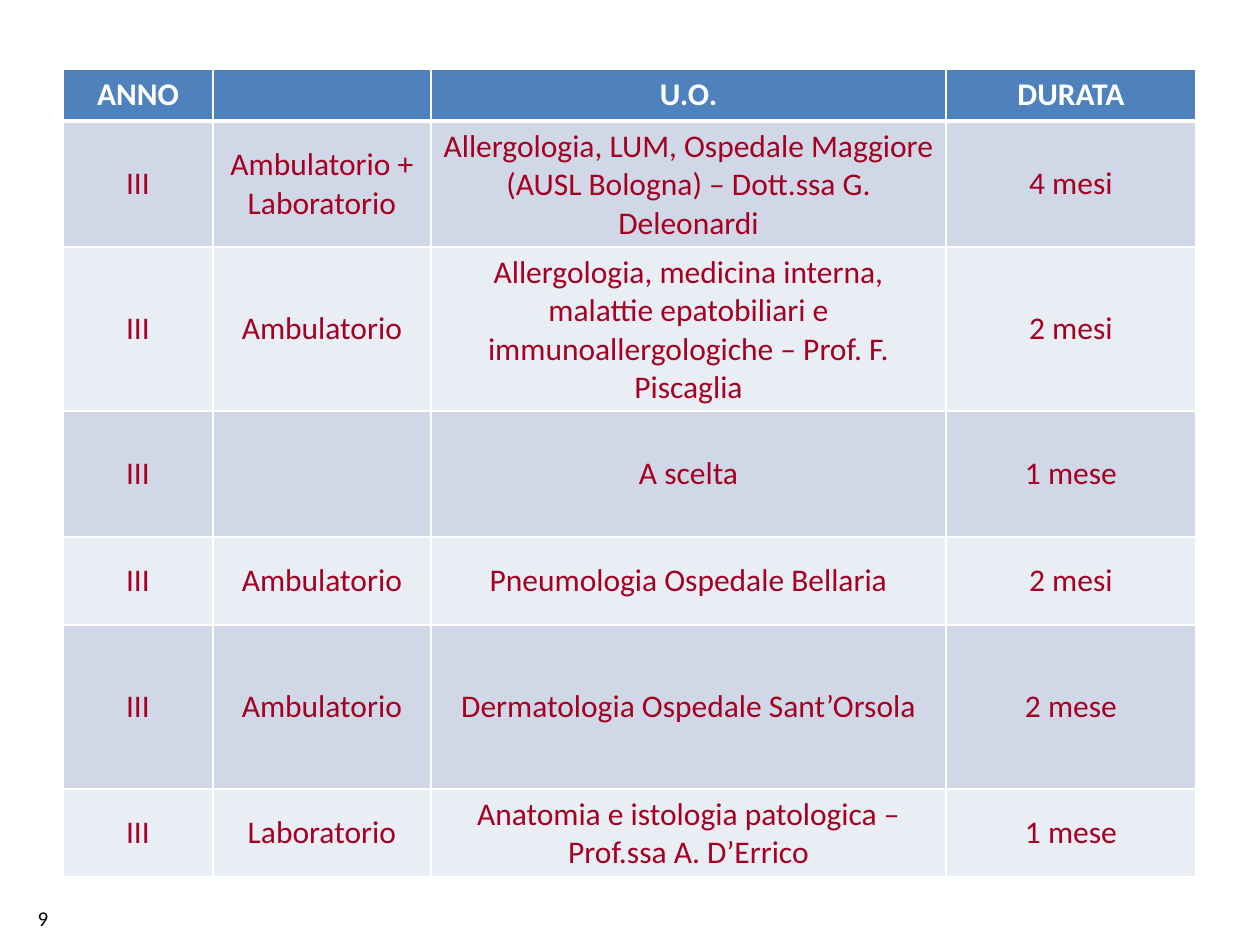
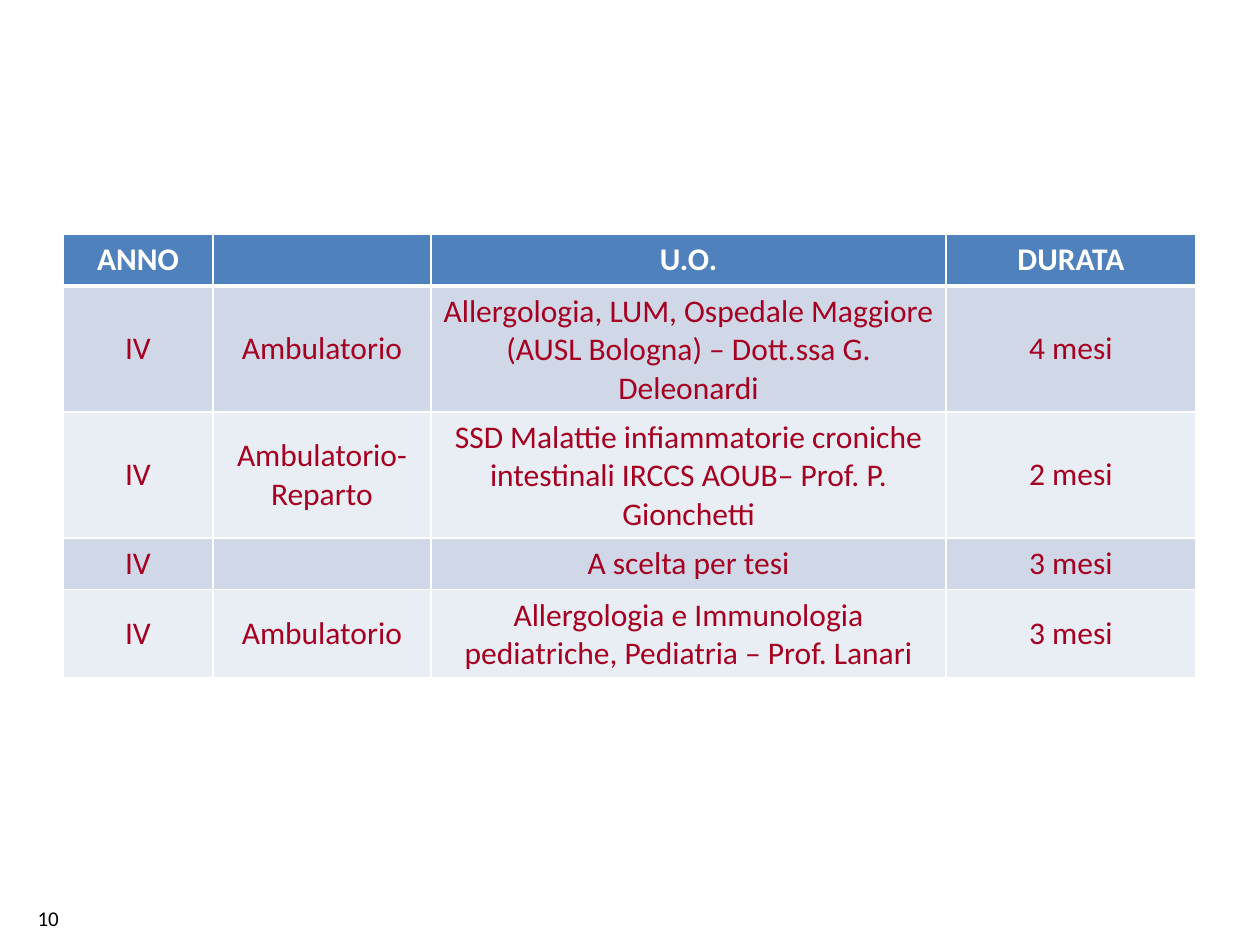
from lxml import etree
from pptx import Presentation
from pptx.dml.color import RGBColor
from pptx.enum.text import MSO_ANCHOR as ANCHOR, PP_ALIGN as ALIGN
from pptx.oxml.ns import qn
from pptx.util import Inches, Pt

# Shared colours and layout
WHITE = RGBColor(0xFF, 0xFF, 0xFF)
BLACK = RGBColor(0x00, 0x00, 0x00)
BLUE = RGBColor(0x4F, 0x81, 0xBD)
RED = RGBColor(0xA5, 0x00, 0x21)
BANDS = [RGBColor(0xD0, 0xD8, 0xE8), RGBColor(0xE9, 0xED, 0xF4)]
FONT = "Calibri"
HEADER = ("ANNO", "", "U.O.", "DURATA")
HEADER_HEIGHT = 0.41
COL_WIDTHS = [1.19, 1.73, 4.09, 1.98]

# Each slide: page number, year, table top, rows of (height, setting, unit, duration)
SLIDES = [
    ("9", "III", 0.55, [
        (1.0, "Ambulatorio + Laboratorio",
         "Allergologia, LUM, Ospedale Maggiore (AUSL Bologna) – Dott.ssa G. Deleonardi", "4 mesi"),
        (1.3, "Ambulatorio",
         "Allergologia, medicina interna, malattie epatobiliari e "
         "immunoallergologiche – Prof. F. Piscaglia", "2 mesi"),
        (1.0, "", "A scelta", "1 mese"),
        (0.7, "Ambulatorio", "Pneumologia Ospedale Bellaria", "2 mesi"),
        (1.3, "Ambulatorio", "Dermatologia Ospedale Sant’Orsola", "2 mese"),
        (0.7, "Laboratorio", "Anatomia e istologia patologica – Prof.ssa A. D’Errico", "1 mese"),
    ]),
    ("10", "IV", 1.86, [
        (1.0, "Ambulatorio",
         "Allergologia, LUM, Ospedale Maggiore (AUSL Bologna) – Dott.ssa G. Deleonardi", "4 mesi"),
        (1.0, "Ambulatorio-Reparto",
         "SSD Malattie infiammatorie croniche intestinali IRCCS AOUB– Prof. P. Gionchetti",
         "2 mesi"),
        (0.41, "", "A scelta per tesi", "3 mesi"),
        (0.7, "Ambulatorio",
         "Allergologia e Immunologia pediatriche, Pediatria – Prof. Lanari", "3 mesi"),
    ]),
]


def write(tf, text, size=18, color=RED, bold=False, align=ALIGN.CENTER):
    p = tf.paragraphs[0]
    p.alignment = align
    if text:
        r = p.add_run()
        r.text = text
        r.font.name, r.font.size, r.font.bold = FONT, Pt(size), bold
        r.font.color.rgb = color


def add_borders(cell, top, bottom):
    tc_pr = cell._tc.get_or_add_tcPr()
    for side, width in (("L", 1), ("R", 1), ("T", top), ("B", bottom)):
        ln = etree.SubElement(tc_pr, qn(f"a:ln{side}"), w=str(Pt(width)))
        fill = etree.SubElement(ln, qn("a:solidFill"))
        etree.SubElement(fill, qn("a:srgbClr"), val=str(WHITE))


prs = Presentation()
prs.slide_width, prs.slide_height = Inches(10), Inches(7.5)

for page, year, top, units in SLIDES:
    s = prs.slides.add_slide(prs.slide_layouts[6])

    # Page number
    sp = s.shapes.add_textbox(Inches(0.2), Inches(7.14), Inches(0.87), Inches(0.3))
    sp.text_frame.word_wrap = True
    write(sp.text_frame, page, size=12, color=BLACK, align=ALIGN.LEFT)

    # Rotation table
    heights = [HEADER_HEIGHT] + [unit[0] for unit in units]
    rows = [HEADER] + [(year, *unit[1:]) for unit in units]
    table = s.shapes.add_table(len(rows), len(COL_WIDTHS), Inches(0.5), Inches(top),
                               Inches(sum(COL_WIDTHS)), Inches(sum(heights))).table
    for col, width in zip(table.columns, COL_WIDTHS):
        col.width = Inches(width)

    for i, (height, texts) in enumerate(zip(heights, rows)):
        table.rows[i].height = Inches(height)
        header = i == 0
        for j, text in enumerate(texts):
            cell = table.cell(i, j)
            add_borders(cell, top=3 if i == 1 else 1, bottom=3 if header else 1)
            cell.fill.solid()
            cell.fill.fore_color.rgb = BLUE if header else BANDS[(i - 1) % 2]
            cell.vertical_anchor = ANCHOR.TOP if header else ANCHOR.MIDDLE
            write(cell.text_frame, text, color=WHITE if header else RED, bold=header)

prs.save("out.pptx")
